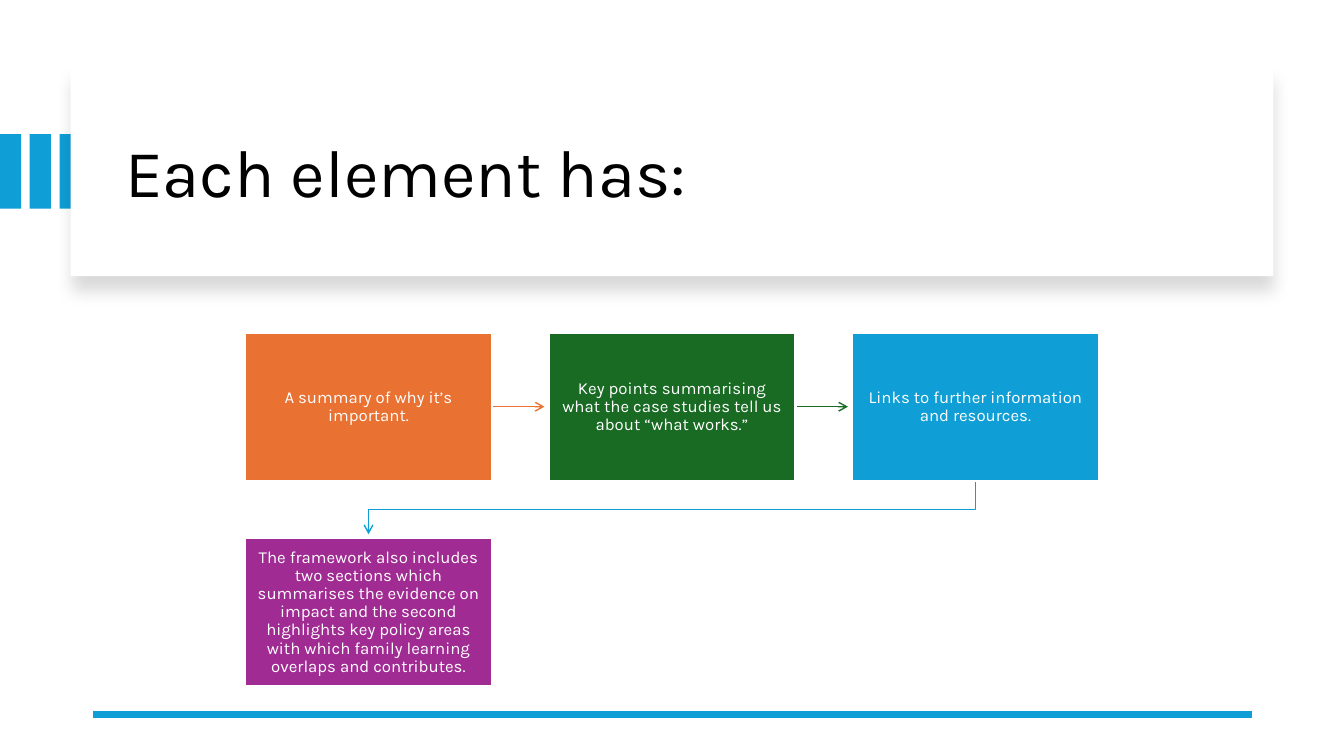
from dataclasses import dataclass

from lxml.etree import SubElement
from pptx import Presentation
from pptx.dml.color import RGBColor
from pptx.enum.shapes import MSO_CONNECTOR, MSO_SHAPE
from pptx.enum.text import MSO_ANCHOR, MSO_AUTO_SIZE, PP_ALIGN
from pptx.oxml.ns import qn
from pptx.shapes.autoshape import Shape
from pptx.shapes.base import BaseShape
from pptx.slide import Slide
from pptx.text.text import TextFrame
from pptx.util import Inches, Length, Pt


@dataclass(frozen=True)
class Theme:
    font: str = "Karla"
    title_size: int = 48
    box_size: int = 12
    line_spacing: float = 0.9
    black: str = "000000"
    white: str = "FFFFFF"
    blue: str = "0F9ED5"
    orange: str = "E97132"
    green: str = "196B24"
    purple: str = "A02B93"


@dataclass(frozen=True)
class Grid:
    left: float = 2.43
    top: float = 3.3
    box_width: float = 2.45
    box_height: float = 1.47
    column_step: float = 3.01
    row_step: float = 2.04
    arrow_gap: float = 0.04

    def x(self, column: int) -> float:
        return self.left + column * self.column_step

    def y(self, row: int) -> float:
        return self.top + row * self.row_step

    def center(self, column: int) -> float:
        return self.x(column) + self.box_width / 2


@dataclass(frozen=True)
class Element:
    text: str
    color: str
    column: int
    row: int


THEME = Theme()
GRID = Grid()
ELEMENTS = [
    Element("A summary of why it’s important.", THEME.orange, 0, 0),
    Element(
        "Key points summarising what the case studies tell us about “what works.”",
        THEME.green, 1, 0,
    ),
    Element("Links to further information and resources.", THEME.blue, 2, 0),
    Element(
        "The framework also includes two sections which summarises the evidence "
        "on impact and the second highlights key policy areas with which family "
        "learning overlaps and contributes.",
        THEME.purple, 0, 1,
    ),
]


def inches(*values: float) -> list[Length]:
    return [Inches(value) for value in values]


def add_rectangle(
    slide: Slide, left: float, top: float, width: float, height: float, color: str
) -> Shape:
    shape = slide.shapes.add_shape(
        MSO_SHAPE.RECTANGLE, *inches(left, top, width, height)
    )
    shape.shadow.inherit = False
    shape.fill.solid()
    shape.fill.fore_color.rgb = RGBColor.from_string(color)
    shape.line.fill.background()
    return shape


def write_text(
    frame: TextFrame, text: str, size: int, color: str, alignment: PP_ALIGN
) -> None:
    frame.word_wrap = True
    frame.auto_size = MSO_AUTO_SIZE.NONE
    frame.vertical_anchor = MSO_ANCHOR.MIDDLE
    paragraph = frame.paragraphs[0]
    paragraph.alignment = alignment
    paragraph.line_spacing = THEME.line_spacing
    run = paragraph.add_run()
    run.text = text
    run.font.name = THEME.font
    run.font.size = Pt(size)
    run.font.color.rgb = RGBColor.from_string(color)


def style_line(
    shape: BaseShape, color: str, width: float, arrow: bool = True
) -> None:
    shape.line.color.rgb = RGBColor.from_string(color)
    shape.line.width = Pt(width)
    properties = shape.element.spPr
    if arrow:
        SubElement(properties.find(qn("a:ln")), qn("a:tailEnd"), type="arrow")
    SubElement(properties, qn("a:effectLst"))


def add_straight_line(
    slide: Slide, start: tuple[float, float], end: tuple[float, float],
    color: str, width: float, arrow: bool = True,
) -> None:
    connector = slide.shapes.add_connector(
        MSO_CONNECTOR.STRAIGHT, *inches(*start, *end)
    )
    style_line(connector, color, width, arrow)


def add_return_arrow(slide: Slide, source: Element, target: Element) -> None:
    bottom = GRID.y(source.row) + GRID.box_height
    below = GRID.y(target.row)
    middle = (bottom + below) / 2
    start_x, end_x = GRID.center(source.column), GRID.center(target.column)
    builder = slide.shapes.build_freeform(*inches(start_x, bottom))
    corners = [(start_x, middle), (end_x, middle), (end_x, below - GRID.arrow_gap)]
    builder.add_line_segments([inches(*corner) for corner in corners], close=False)
    shape = builder.convert_to_shape()
    shape.fill.background()
    style_line(shape, source.color, 1)


def add_arrow(slide: Slide, source: Element, target: Element) -> None:
    if source.row != target.row:
        add_return_arrow(slide, source, target)
        return
    middle = GRID.y(source.row) + GRID.box_height / 2
    start = (GRID.x(source.column) + GRID.box_width, middle)
    end = (GRID.x(target.column) - GRID.arrow_gap, middle)
    add_straight_line(slide, start, end, source.color, 1)


def add_element(slide: Slide, element: Element) -> None:
    box = add_rectangle(
        slide, GRID.x(element.column), GRID.y(element.row),
        GRID.box_width, GRID.box_height, element.color,
    )
    box.line.color.rgb = RGBColor.from_string(THEME.white)
    box.line.width = Pt(1.5)
    frame = box.text_frame
    frame.margin_left = frame.margin_right = Inches(0.12)
    frame.margin_top = frame.margin_bottom = Inches(0.13)
    write_text(frame, element.text, THEME.box_size, THEME.white, PP_ALIGN.CENTER)


def add_header(slide: Slide) -> None:
    for index in range(3):
        add_rectangle(slide, index * 0.295, 1.33, 0.21, 0.74, THEME.blue)
    card = add_rectangle(slide, 0.7, 0.67, 11.93, 2.07, THEME.white)
    shadow = SubElement(
        card.element.spPr.find(qn("a:effectLst")), qn("a:outerShdw"),
        blurRad=str(Pt(11)), dist=str(Pt(10)), dir="5400000",
        algn="t", rotWithShape="0",
    )
    shadow_color = SubElement(shadow, qn("a:srgbClr"), val=THEME.black)
    SubElement(shadow_color, qn("a:alpha"), val="15000")

    title = slide.shapes.title
    title.left, title.top, title.width, title.height = inches(1.14, 0.89, 11.13, 1.7)
    write_text(
        title.text_frame, "Each element has:", THEME.title_size, THEME.black,
        PP_ALIGN.LEFT,
    )
    card.element.addnext(title.element)


def main() -> None:
    presentation = Presentation()
    presentation.slide_width, presentation.slide_height = inches(13.33, 7.5)
    slide = presentation.slides.add_slide(presentation.slide_layouts[5])
    add_header(slide)
    add_straight_line(slide, (12.42, 7.09), (0.92, 7.09), THEME.blue, 4.5, arrow=False)
    for source, target in zip(ELEMENTS, ELEMENTS[1:]):
        add_arrow(slide, source, target)
    for element in ELEMENTS:
        add_element(slide, element)
    presentation.save("out.pptx")


if __name__ == "__main__":
    main()
